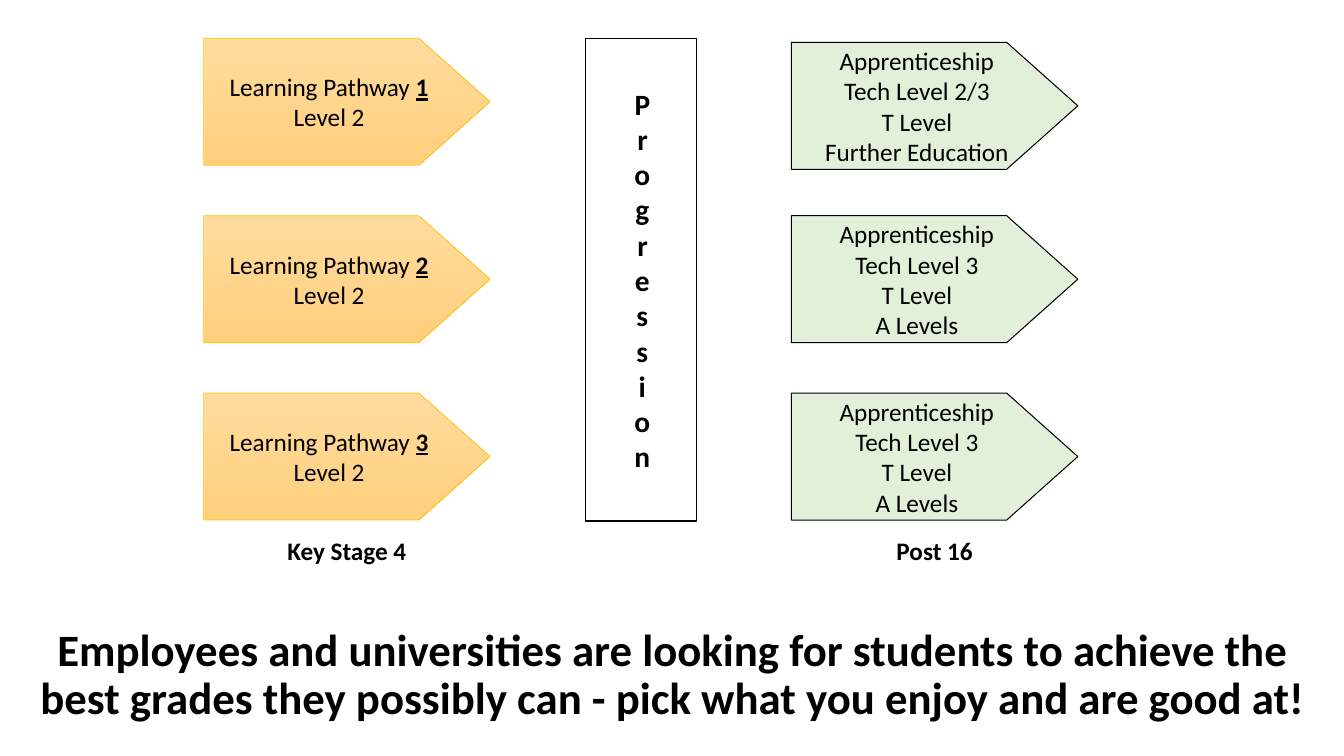
"""Build the slide on learning pathways from Key Stage 4 to Post 16."""
from pptx import Presentation
from pptx.dml.color import RGBColor
from pptx.enum import shapes, text
from pptx.util import Inches, Pt


def colour(value):
    return RGBColor.from_string(value)


def add_span(para, words, size, bold=False, underline=False):
    para.alignment = text.PP_ALIGN.CENTER
    span = para.add_run()
    span.text = words
    span.font.name = "Calibri"
    span.font.size = Pt(size)
    span.font.bold = bold
    span.font.underline = underline
    span.font.color.rgb = colour("000000")


deck = Presentation()
deck.slide_width = Inches(13.33)
deck.slide_height = Inches(7.5)
page = deck.slides.add_slide(deck.slide_layouts[5])

title = page.shapes.title
title.left, title.top = Inches(0.2), Inches(6.06)
title.width, title.height = Inches(12.95), Inches(1.29)
title.text_frame.word_wrap = True
title.text_frame.auto_size = text.MSO_AUTO_SIZE.NONE
title.text_frame.vertical_anchor = text.MSO_ANCHOR.MIDDLE
para = title.text_frame.paragraphs[0]
para.line_spacing = 0.9
add_span(para, "Employees and universities are looking for students to achieve the best grades "
         "they possibly can - pick what you enjoy and are good at!", 32, bold=True)

pathway_left, outcome_left = 2.02, 7.85
arrow_width, arrow_height = 2.84, 1.26
first_top, row_step = 0.38, 1.76

outcomes = [
    ["Apprenticeship", "Tech Level 2/3", "T Level", "Further Education"],
    ["Apprenticeship", "Tech Level 3", "T Level", "A Levels"],
    ["Apprenticeship", "Tech Level 3", "T Level", "A Levels"],
]
arrows = []
for row, outcome in enumerate(outcomes):
    top = first_top + row * row_step
    outcome_top = 0.42 if row == 0 else top
    arrows.append((pathway_left, top, ["Learning Pathway ", "Level 2"], str(row + 1)))
    arrows.append((outcome_left, outcome_top, outcome, ""))

for left, top, lines, number in arrows:
    arrow = page.shapes.add_shape(shapes.MSO_SHAPE.PENTAGON, Inches(left), Inches(top),
                                  Inches(arrow_width), Inches(arrow_height))
    arrow.shadow.inherit = False
    arrow.adjustments[0] = 0.56
    if number:
        arrow.fill.gradient()
        arrow.fill.gradient_angle = 270
        for stop, shade in zip(arrow.fill.gradient_stops, ["FFDB9E", "FFD07C"]):
            stop.color.rgb = colour(shade)
        arrow.line.color.rgb = colour("FFC000")
        arrow.line.width = Pt(0.5)
    else:
        arrow.fill.solid()
        arrow.fill.fore_color.rgb = colour("E2F0D9")
        arrow.line.color.rgb = colour("000000")
        arrow.line.width = Pt(0.75)
    frame = arrow.text_frame
    frame.word_wrap = False
    frame.vertical_anchor = text.MSO_ANCHOR.MIDDLE
    for index, line in enumerate(lines):
        para = frame.add_paragraph() if index else frame.paragraphs[0]
        add_span(para, line, 18)
        if number and index == 0:
            add_span(para, number, 18, bold=True, underline=True)

panel = page.shapes.add_shape(shapes.MSO_SHAPE.RECTANGLE, Inches(5.81), Inches(first_top),
                              Inches(1.1), Inches(4.79))
panel.shadow.inherit = False
panel.fill.solid()
panel.fill.fore_color.rgb = colour("FFFFFF")
panel.line.color.rgb = colour("000000")
panel.line.width = Pt(1)

progression = page.shapes.add_textbox(Inches(6.04), Inches(first_top), Inches(0.64), Inches(4.79))
frame = progression.text_frame
frame.word_wrap = True
frame.vertical_anchor = text.MSO_ANCHOR.MIDDLE
frame.margin_left = Inches(0.12)
progression.element.txBody.bodyPr.set("vert", "wordArtVert")
add_span(frame.paragraphs[0], "Progression", 21, bold=True)

for left, caption in [(pathway_left, "Key Stage 4"), (outcome_left, "Post 16")]:
    box = page.shapes.add_textbox(Inches(left), Inches(5.26), Inches(arrow_width), Inches(0.4))
    box.text_frame.word_wrap = True
    add_span(box.text_frame.paragraphs[0], caption, 18, bold=True)

deck.save("out.pptx")
